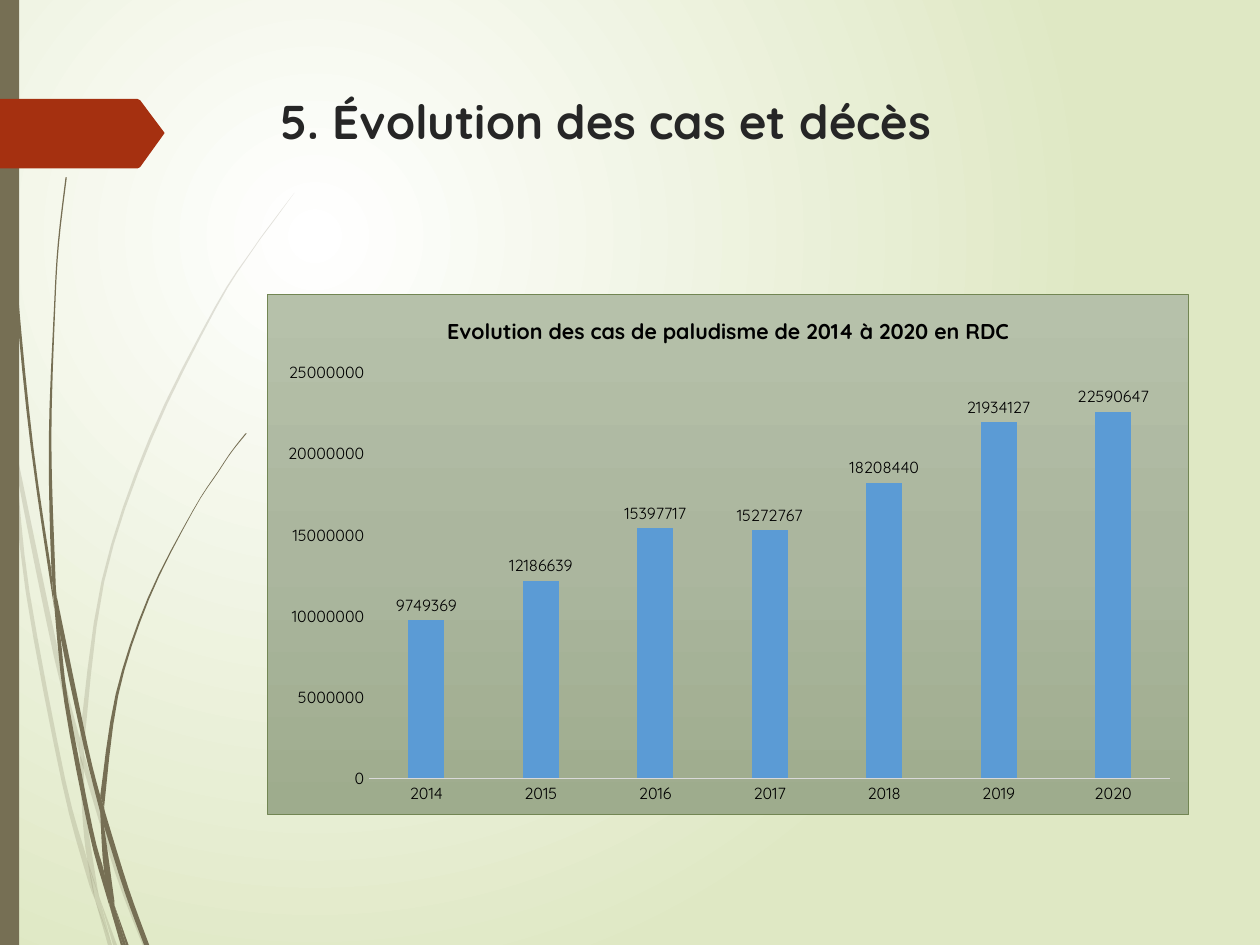
import dataclasses

import pptx
import pptx.chart.data
import pptx.dml.color
import pptx.enum.chart
import pptx.enum.shapes
import pptx.enum.text
import pptx.oxml
import pptx.oxml.ns
import pptx.util

COLUMNS, ROWS = 980, 735  # the slide grid, one cell is 0.01 inch
CELL = pptx.util.Inches(0.01)


@dataclasses.dataclass(frozen=True)
class Theme:
    font: str = "Quicksand"
    heading: str = "262626"
    ink: str = "000000"
    stem: str = "766F54"
    marker: str = "A53010"
    bar: str = "5B9BD5"
    axis: str = "D9D9D9"
    border: str = "728653"
    backdrop: tuple = ((0, "FFFFFF"), (100, "DFE8C4"))
    panel: tuple = ((0, "B6C1AA"), (50, "ABB69E"), (100, "9EAC8D"))
    title_size: float = 26.5
    caption_size: float = 12
    body_size: float = 10
    label_size: float = 9


# Each blade piece is a pair of edges, given in grid cells
FAINT_BLADES = [
    ([(8, 343), (6, 315), (0, 276)], [(0, 293), (7, 337)]),
    ([(10, 338), (13, 368), (42, 511), (62, 587)], [(62, 574), (46, 510), (10, 338)]),
    ([(65, 584), (68, 595), (93, 678), (114, 735)], [(111, 735), (90, 680), (65, 598)]),
    ([(77, 697), (88, 735)], [(91, 735), (77, 697)]),
    ([(8, 343), (20, 460), (48, 608), (67, 680), (74, 700)],
     [(73, 693), (68, 669), (51, 607), (23, 460), (13, 368), (8, 343)]),
    ([(62, 587), (64, 633), (68, 669), (77, 697)], [(76, 692), (67, 633), (65, 598), (62, 587)]),
    ([(229, 150), (213, 171), (197, 193), (167, 239), (116, 341), (79, 452), (62, 574)],
     [(65, 584), (81, 453), (118, 342), (168, 240), (197, 194), (213, 172), (229, 150)]),
    ([(74, 700), (84, 735)], [(87, 735), (74, 700)]),
    ([(62, 574), (62, 587), (65, 598)], [(65, 584), (62, 574)]),
    ([(68, 669), (74, 700), (87, 735)], [(77, 697), (68, 669)]),
]
DARK_BLADES = [
    ([(2, 0), (3, 47), (5, 108), (12, 228), (24, 348), (42, 472)],
     [(40, 444), (26, 348), (14, 228), (6, 107), (3, 47), (3, 0)]),
    ([(44, 463), (47, 495), (65, 580), (78, 632)], [(78, 619), (68, 579), (44, 463)]),
    ([(81, 628), (83, 636), (100, 691), (116, 735)], [(112, 735), (97, 694), (81, 643)]),
    ([(42, 468), (50, 546), (69, 646), (82, 694), (86, 707)],
     [(85, 703), (81, 678), (72, 644), (53, 545), (47, 495), (42, 468)]),
    ([(51, 138), (45, 189), (42, 240), (38, 342), (40, 440), (44, 462)],
     [(44, 463), (43, 444), (40, 342), (43, 240), (46, 189), (52, 138)]),
    ([(89, 704), (98, 735)], [(100, 735), (89, 704)]),
    ([(40, 440), (42, 468), (47, 495)], [(44, 463), (40, 440)]),
    ([(191, 337), (180, 351), (170, 366), (150, 397), (115, 465), (90, 540), (78, 619)],
     [(81, 628), (92, 541), (116, 466), (150, 398), (170, 367), (180, 352), (192, 337)]),
    ([(86, 707), (94, 735)], [(96, 735), (86, 707)]),
    ([(78, 632), (81, 678), (89, 704)], [(89, 701), (81, 643), (78, 632)]),
    ([(78, 619), (78, 632), (81, 643)], [(81, 628), (78, 619)]),
    ([(81, 678), (86, 707), (96, 735)], [(98, 735), (89, 704), (81, 678)]),
]
MARKER = [(0, 77), (107, 77), (109, 78), (127, 102), (128, 103.5),
          (127, 105), (109, 130), (107, 131), (0, 131)]
CASES = {"2014": 9749369, "2015": 12186639, "2016": 15397717, "2017": 15272767,
         "2018": 18208440, "2019": 21934127, "2020": 22590647}


def rgb(color):
    return pptx.dml.color.RGBColor.from_string(color)


def set_font(font, name, size, color, bold=False):
    font.name, font.size, font.bold = name, pptx.util.Pt(size), bold
    font.color.rgb = rgb(color)


def write(frame, text, align=None, **style):
    paragraph = frame.paragraphs[0]
    paragraph.alignment = align
    run = paragraph.add_run()
    run.text = text
    set_font(run.font, **style)


def gradient(stops, direction):
    marks = "".join(f'<a:gs pos="{share * 1000}"><a:srgbClr val="{color}"/></a:gs>'
                    for share, color in stops)
    return (f'<a:gradFill {pptx.oxml.ns.nsdecls("a")} rotWithShape="1">'
            f"<a:gsLst>{marks}</a:gsLst>{direction}</a:gradFill>")


def smooth(edge, steps=4):
    """Pass a Catmull-Rom curve through the points of an edge."""
    curve = [edge[0]]
    for i in range(len(edge) - 1):
        a, b, c, d = (edge[min(max(i + k, 0), len(edge) - 1)] for k in (-1, 0, 1, 2))
        for t in (step / steps for step in range(1, steps + 1)):
            curve.append(tuple(
                (2 * q + (r - p) * t + (2 * p - 5 * q + 4 * r - s) * t ** 2
                 + (3 * q - p - 3 * r + s) * t ** 3) / 2
                for p, q, r, s in zip(a, b, c, d)))
    return curve


class SlideBuilder:
    def __init__(self, slide, theme):
        self.slide, self.theme = slide, theme

    def background(self):
        self.slide.background.fill.solid()
        fill = self.slide.element.find(".//" + pptx.oxml.ns.qn("p:bgPr"))[0]
        glow = ('<a:path path="circle"><a:fillToRect l="50000" t="50000" '
                'r="100000" b="100000"/></a:path>')
        fill.getparent().replace(fill, pptx.oxml.parse_xml(gradient(self.theme.backdrop, glow)))

    def paint(self, shape, color, opacity=100):
        shape.shadow.inherit = False
        shape.fill.solid()
        shape.fill.fore_color.rgb = rgb(color)
        shape.line.fill.background()
        if opacity < 100:
            tone = shape.element.spPr.find(".//" + pptx.oxml.ns.qn("a:srgbClr"))
            tone.append(pptx.oxml.parse_xml(
                f'<a:alpha {pptx.oxml.ns.nsdecls("a")} val="{opacity * 1000}"/>'))

    def outline(self, points, color, opacity=100):
        start, *rest = [(x * CELL, y * CELL) for x, y in points]
        builder = self.slide.shapes.build_freeform(*start)
        builder.add_line_segments(rest, close=True)
        self.paint(builder.convert_to_shape(), color, opacity)

    def blades(self, pieces, opacity=100):
        for down, up in pieces:
            self.outline(smooth(down) + smooth(up), self.theme.stem, opacity)

    def band(self, *box):
        kind = pptx.enum.shapes.MSO_SHAPE.RECTANGLE
        self.paint(self.slide.shapes.add_shape(kind, *(n * CELL for n in box)), self.theme.stem)

    def title(self, text, *box):
        heading = self.slide.shapes.title
        heading.left, heading.top, heading.width, heading.height = (n * CELL for n in box)
        frame = heading.text_frame
        frame.word_wrap = True
        frame.auto_size = pptx.enum.text.MSO_AUTO_SIZE.NONE
        frame.vertical_anchor = pptx.enum.text.MSO_ANCHOR.TOP
        write(frame, text, align=pptx.enum.text.PP_ALIGN.LEFT, name=self.theme.font,
              size=self.theme.title_size, color=self.theme.heading, bold=True)

    def column_chart(self, caption, values, *box):
        theme, enums = self.theme, pptx.enum.chart
        data = pptx.chart.data.CategoryChartData()
        data.categories = list(values)
        data.add_series("Series 1", list(values.values()))
        chart = self.slide.shapes.add_chart(
            enums.XL_CHART_TYPE.COLUMN_CLUSTERED, *(n * CELL for n in box), data).chart
        set_font(chart.font, theme.font, theme.body_size, theme.ink)
        chart.has_legend = False
        chart.has_title = True
        write(chart.chart_title.text_frame, caption, name=theme.font,
              size=theme.caption_size, color=theme.ink, bold=True)
        chart.chart_title.include_in_layout = False

        # Axes
        years, cases = chart.category_axis, chart.value_axis
        for axis in (years, cases):
            axis.has_major_gridlines = False
            axis.major_tick_mark = axis.minor_tick_mark = enums.XL_TICK_MARK.NONE
            set_font(axis.tick_labels.font, theme.font, theme.label_size, theme.ink)
        years.format.line.color.rgb = rgb(theme.axis)
        years.format.line.width = pptx.util.Pt(0.75)
        cases.format.line.fill.background()
        cases.minimum_scale, cases.maximum_scale, cases.major_unit = 0, 25_000_000, 5_000_000

        # Bars and their values
        plot = chart.plots[0]
        plot.gap_width, plot.overlap, plot.vary_by_categories = 219, -27, False
        bars = plot.series[0]
        bars.format.fill.solid()
        bars.format.fill.fore_color.rgb = rgb(theme.bar)
        labels = bars.data_labels
        labels.show_value = True
        labels.position = enums.XL_LABEL_POSITION.OUTSIDE_END
        set_font(labels.font, theme.font, theme.label_size, theme.ink)

        # Panel behind the chart and place of the plot
        qn, nsdecls = pptx.oxml.ns.qn, pptx.oxml.ns.nsdecls
        fill = gradient(theme.panel, '<a:lin ang="5400000" scaled="0"/>')
        chart.element.find(qn("c:txPr")).addprevious(pptx.oxml.parse_xml(
            f'<c:spPr {nsdecls("c", "a")}>{fill}<a:ln w="{pptx.util.Pt(0.5)}"><a:solidFill>'
            f'<a:srgbClr val="{theme.border}"/></a:solidFill></a:ln></c:spPr>'))
        area = chart.element.find(".//" + qn("c:plotArea"))
        for layout in area.findall(qn("c:layout")):
            area.remove(layout)
        shares = "".join(f'<c:{key} val="{share}"/>' for key, share in (
            ("x", 0.11), ("y", 0.15), ("w", 0.87), ("h", 0.78)))
        area.insert(0, pptx.oxml.parse_xml(
            f'<c:layout {nsdecls("c")}><c:manualLayout><c:layoutTarget val="inner"/>'
            f'<c:xMode val="edge"/><c:yMode val="edge"/>{shares}</c:manualLayout></c:layout>'))


def main():
    deck = pptx.Presentation()
    deck.slide_width, deck.slide_height = COLUMNS * CELL, ROWS * CELL
    theme = Theme()
    page = SlideBuilder(deck.slides.add_slide(deck.slide_layouts[5]), theme)

    # Backdrop: glow, grass, side band and marker
    page.background()
    page.blades(FAINT_BLADES, opacity=20)
    page.blades(DARK_BLADES)
    page.band(0, 0, 15, ROWS)
    page.outline(MARKER, theme.marker)

    # Content
    page.title("5. Évolution des cas et décès", 208, 67, 716, 137)
    page.column_chart("Evolution des cas de paludisme de 2014 à 2020 en RDC", CASES,
                      208, 229, 717, 405)
    deck.save("out.pptx")


if __name__ == "__main__":
    main()
